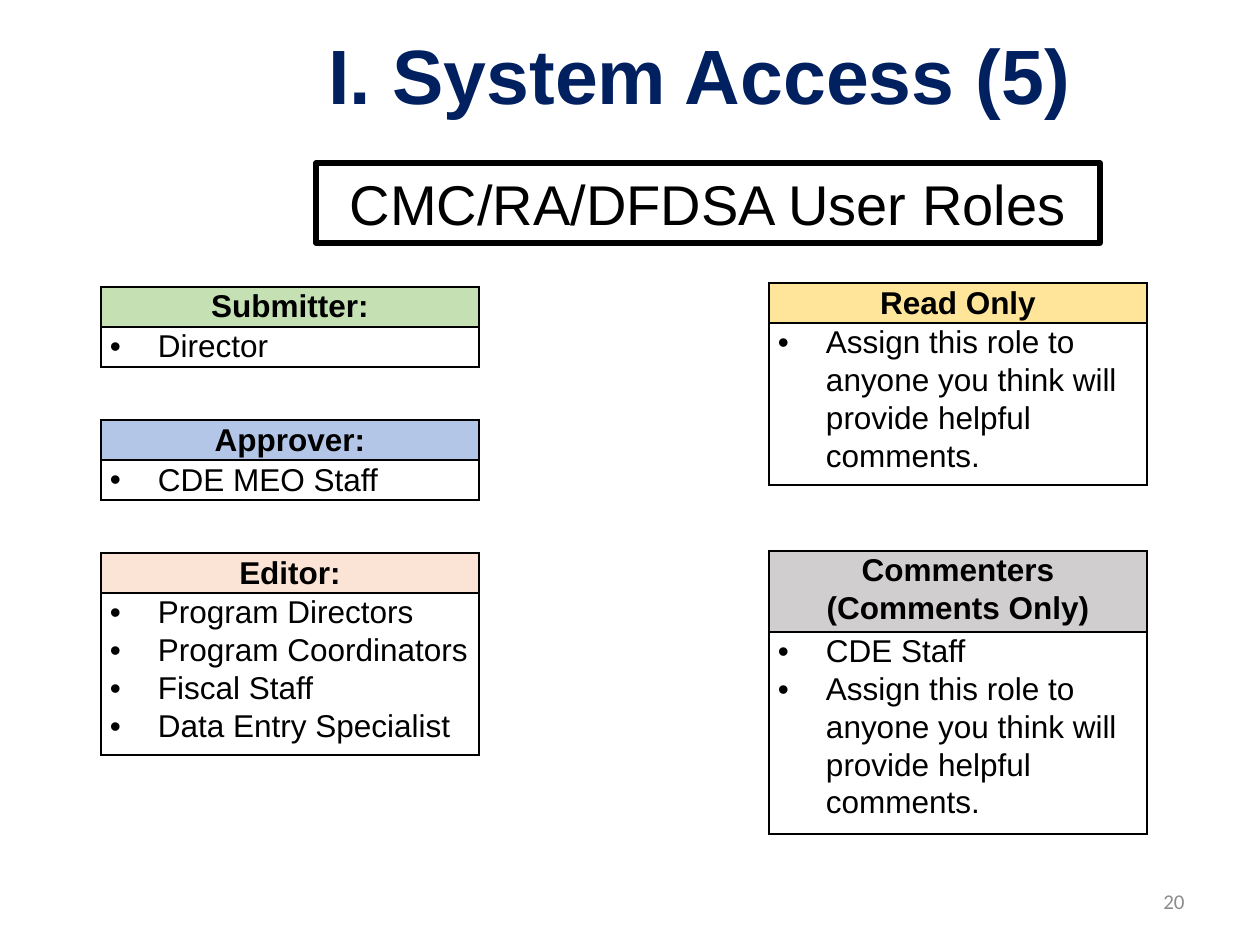
import pptx
import pptx.util
import pptx.dml.color
import pptx.enum.text
import pptx.enum.shapes
import pptx.oxml

PX = 914400 // 126
HUE = {"black": "000000", "navy": "002060", "gray": "8C8C8C",
       "green": "C5E0B3", "blue": "B4C6E7", "peach": "FBE4D5",
       "gold": "FFE599", "silver": "D0CECE"}
ALIGN = pptx.enum.text.PP_ALIGN
ANCHOR = pptx.enum.text.MSO_ANCHOR
NS = 'xmlns:a="http://schemas.openxmlformats.org/drawingml/2006/main"'

# Content
TITLE = "I. System Access (5)"
BANNER = "CMC/RA/DFDSA User Roles"
NUMBER = "20"
ASSIGN = "Assign this role to anyone you think will provide helpful comments."
LEFT, RIGHT, WIDE = 101, 769, 378
# heading, fill, left, top, row heights, members
ROLES = [
    ("Submitter:", "green", LEFT, 287, (40, 40), ["Director"]),
    ("Approver:", "blue", LEFT, 420, (40, 40), ["CDE MEO Staff"]),
    ("Editor:", "peach", LEFT, 553, (40, 162),
     ["Program Directors", "Program Coordinators", "Fiscal Staff",
      "Data Entry Specialist"]),
    ("Read Only", "gold", RIGHT, 283, (40, 162), [ASSIGN]),
    ("Commenters (Comments Only)", "silver", RIGHT, 551, (81, 202),
     ["CDE Staff", ASSIGN]),
]

# Formats
HEAD = {"name": "Arial", "size": 18, "bold": True, "color": "black"}
ITEM = {**HEAD, "bold": False}
BIG = {**HEAD, "size": 44, "color": "navy"}
ROLE = {**ITEM, "size": 32}
FOOT = {**ITEM, "name": "Calibri", "size": 12, "color": "gray"}
PAD = {"margin_left": 9 * PX, "margin_right": 9 * PX,
       "margin_top": 0, "margin_bottom": 0}


def apply(thing, look):
    for key, val in look.items():
        setattr(thing, key, val)


def rgb(name):
    return pptx.dml.color.RGBColor.from_string(HUE[name])


def box(*nums):
    return [n * PX for n in nums]


def write(par, text, look, align):
    par.text = text
    par.alignment = align
    for key, val in look.items():
        if key == "color":
            par.font.color.rgb = rgb(val)
        else:
            setattr(par.font, key, pptx.util.Pt(val) if key == "size" else val)


def bullet(par):
    props = par._p.get_or_add_pPr()
    props.set("marL", str(48 * PX))
    props.set("indent", str(-48 * PX))
    props.append(pptx.oxml.parse_xml(f'<a:buFont {NS} typeface="Arial"/>'))
    props.append(pptx.oxml.parse_xml(f'<a:buChar {NS} char="•"/>'))


def border(cell):
    props = cell._tc.get_or_add_tcPr()
    for spot, side in enumerate("LRTB"):
        props.insert(spot, pptx.oxml.parse_xml(
            f'<a:ln{side} {NS} w="12700"><a:solidFill><a:srgbClr '
            f'val="{HUE["black"]}"/></a:solidFill></a:ln{side}>'))


def role(slide, head, hue, left, top, rows, names):
    table = slide.shapes.add_table(
        2, 1, *box(left, top, WIDE, sum(rows))).table
    apply(table, {"first_row": False, "horz_banding": False})
    for row, high in zip(table.rows, rows):
        row.height = high * PX
    top_cell, low_cell = table.cell(0, 0), table.cell(1, 0)
    top_cell.fill.solid()
    top_cell.fill.fore_color.rgb = rgb(hue)
    low_cell.fill.background()
    for cell in (top_cell, low_cell):
        apply(cell, PAD)
        border(cell)
    par = top_cell.text_frame.paragraphs[0]
    par.line_spacing = 1.07
    write(par, head, HEAD, ALIGN.CENTER)
    frame = low_cell.text_frame
    for i, name in enumerate(names):
        par = frame.add_paragraph() if i else frame.paragraphs[0]
        par.line_spacing = 1.07
        bullet(par)
        write(par, name, ITEM, ALIGN.LEFT)


def main():
    deck = pptx.Presentation()
    deck.slide_width, deck.slide_height = box(1260, 945)
    slide = deck.slides.add_slide(deck.slide_layouts[5])

    # Title
    title = slide.shapes.title
    apply(title, dict(zip(("left", "top", "width", "height"),
                          box(316, 21, 784, 106))))
    apply(title.text_frame, {"word_wrap": True, "vertical_anchor": ANCHOR.TOP})
    write(title.text_frame.paragraphs[0], TITLE, BIG, ALIGN.LEFT)

    # Banner
    banner = slide.shapes.add_shape(
        pptx.enum.shapes.MSO_SHAPE.RECTANGLE, *box(316, 163, 784, 80))
    banner.shadow.inherit = False
    banner.fill.background()
    banner.line.color.rgb = rgb("black")
    banner.line.width = pptx.util.Pt(3)
    write(banner.text_frame.paragraphs[0], BANNER, ROLE, ALIGN.CENTER)

    # Role tables
    for item in ROLES:
        role(slide, *item)

    # Slide number
    foot = slide.shapes.add_textbox(*box(903, 876, 294, 50)).text_frame
    apply(foot, {"word_wrap": True, "vertical_anchor": ANCHOR.MIDDLE})
    write(foot.paragraphs[0], NUMBER, FOOT, ALIGN.RIGHT)

    deck.save("out.pptx")


if __name__ == "__main__":
    main()
